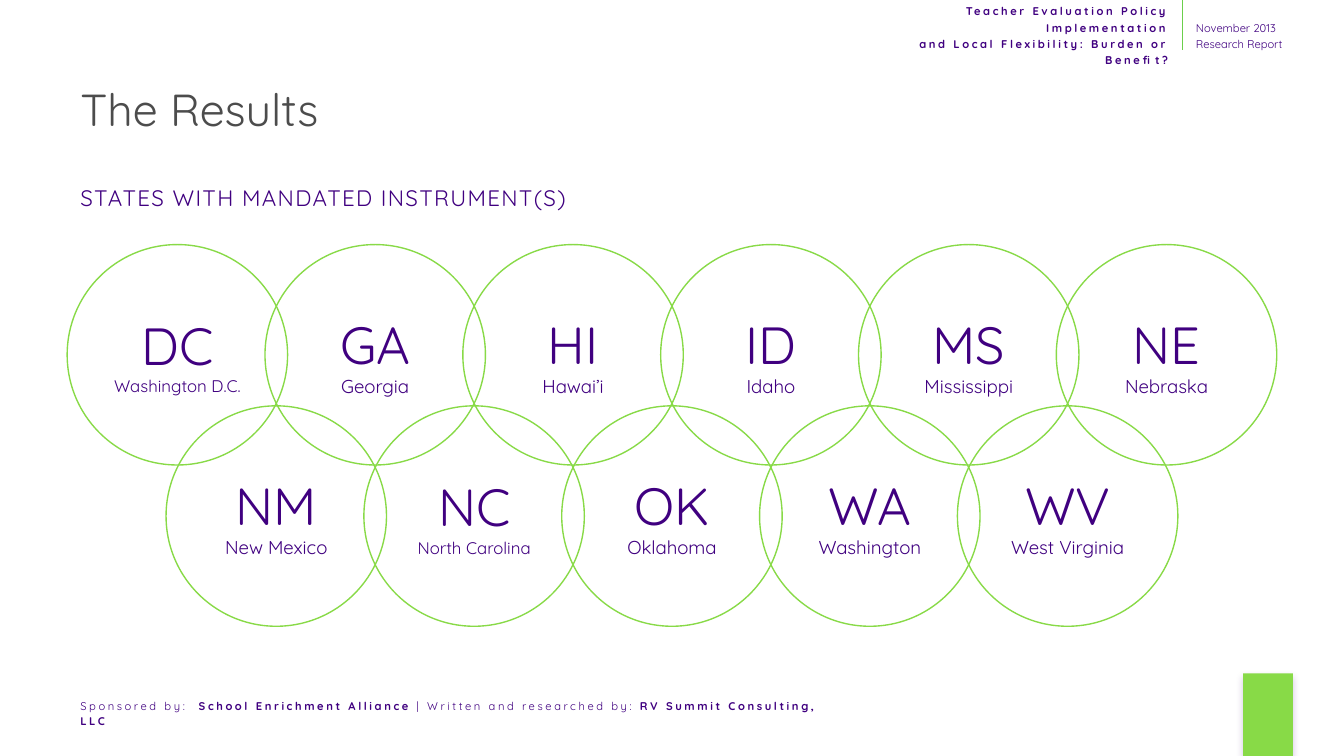
from lxml import etree
from pptx import Presentation
from pptx.dml.color import RGBColor as RGB
from pptx.enum.shapes import MSO_CONNECTOR as LINE, MSO_SHAPE as SHAPE
from pptx.enum.text import MSO_ANCHOR as ANCHOR, PP_ALIGN as ALIGN
from pptx.oxml import parse_xml
from pptx.util import Inches, Pt

FONT = "Quicksand"
COLORS = {"violet": "400080", "green": "88DA47", "rule": "6BCF4B", "grey": "4C4C4C"}

# Content: each line is a list of (text, bold) runs
TITLE = [[("The Results", False)]]
SUBHEAD = [[("STATES WITH MANDATED INSTRUMENT(S)", False)]]
REPORT = [[("Teacher Evaluation Policy Implementation\v"
            "and Local Flexibility: Burden or Benefit?", True)]]
DATE = [[("November 2013", False)], [("Research Report", False)]]
CREDIT = [[("Sponsored by:  ", False), ("School Enrichment Alliance", True),
           (" | Written and researched by: ", False),
           ("RV Summit Consulting, LLC", True)]]

# Rows of states: code, name, size of name
ROWS = [
    [("DC", "Washington D.C.", 9), ("GA", "Georgia", 10), ("HI", "Hawai’i", 10),
     ("ID", "Idaho", 10), ("MS", "Mississippi", 10), ("NE", "Nebraska", 10)],
    [("NM", "New Mexico", 10), ("NC", "North Carolina", 9), ("OK", "Oklahoma", 10),
     ("WA", "Washington", 10), ("WV", "West Virginia", 10)],
]

# Circle grid: the second row sits half a step to the right
LEFT, RIGHT, TOP, DROP, SIZE = 0.5, 9.5, 1.82, 1.2, 1.64
STEP = (RIGHT - LEFT - SIZE) / (len(ROWS[0]) - 1)

NS = "http://schemas.openxmlformats.org/drawingml/2006/main"
SHADOW = f"""<a:effectLst xmlns:a="{NS}">
  <a:outerShdw blurRad="53340" dist="25400" dir="5400000" rotWithShape="0">
    <a:srgbClr val="{COLORS['violet']}"><a:alpha val="24000"/></a:srgbClr>
  </a:outerShdw>
</a:effectLst>"""


def color(name):
    return RGB.from_string(COLORS[name])


def style(font, size, tint="violet"):
    font.name, font.size = FONT, Pt(size)
    font.color.rgb = color(tint)


def add_text(slide, box, lines, size, tint="violet", anchor=ANCHOR.MIDDLE,
             align=ALIGN.LEFT, lead=1.0, track=0):
    frame = slide.shapes.add_textbox(*map(Inches, box)).text_frame
    frame.word_wrap = True
    frame.vertical_anchor = anchor
    for i, line in enumerate(lines):
        para = frame.paragraphs[0] if i == 0 else frame.add_paragraph()
        para.alignment, para.line_spacing = align, lead
        style(para.font, size, tint)
        for text, bold in line:
            # A vertical tab marks a line break inside a run
            for k, part in enumerate(text.split("\v")):
                if k:
                    para.add_line_break()
                run = para.add_run()
                run.text = part
                run.font.bold = bold
                if track:
                    run.font._element.set("spc", str(round(track * 100)))


def add_state(slide, left, top, code, name, size):
    ring = slide.shapes.add_shape(SHAPE.OVAL, *map(Inches, (left, top, SIZE, SIZE)))
    ring.shadow.inherit = False
    ring.fill.background()
    ring.line.color.rgb = color("green")
    ring.line.width = Pt(0.75)
    frame = ring.text_frame
    frame.word_wrap = True
    frame.vertical_anchor = ANCHOR.MIDDLE
    frame.text = f"{code}\n{name}"
    for para, points in zip(frame.paragraphs, (28, size)):
        para.alignment = ALIGN.CENTER
        style(para.font, points)


def main():
    # Wide slide, 16:9
    deck = Presentation()
    deck.slide_width = Inches(10)
    deck.slide_height = Inches(10 * 9 / 16)
    slide = deck.slides.add_slide(deck.slide_layouts[6])

    # Green corner block
    block = slide.shapes.add_shape(SHAPE.RECTANGLE, *map(Inches, (9.25, 5.01, 0.37, 0.62)))
    block.fill.solid()
    block.fill.fore_color.rgb = color("green")
    block.line.fill.background()
    block._element.spPr.append(parse_xml(SHADOW))

    # Header and footer
    add_text(slide, (6.56, 0.07, 2.23, 0.37), REPORT, 6, align=ALIGN.RIGHT,
             lead=1.2, track=1.4)
    add_text(slide, (0.5, 5.22, 5.77, 0.17), CREDIT, 6, lead=1.1, track=1.4)
    add_text(slide, (8.8, 0.09, 0.9, 0.34), DATE, 6, lead=1.2)
    rule = slide.shapes.add_connector(LINE.STRAIGHT, *map(Inches, (8.8, 0.37, 8.8, 0)))
    rule.line.color.rgb = color("rule")
    rule.line.width = Pt(0.25)
    etree.SubElement(rule._element.spPr, f"{{{NS}}}effectLst")

    # Title
    add_text(slide, (0.5, 0.56, 9, 0.94), TITLE, 24, "grey", ANCHOR.TOP)

    # State circles
    for r, row in enumerate(ROWS):
        for c, state in enumerate(row):
            add_state(slide, LEFT + (c + r / 2) * STEP, TOP + r * DROP, *state)

    # Subhead
    add_text(slide, (0.5, 1.3, 9, 0.6), SUBHEAD, 12, anchor=ANCHOR.TOP,
             lead=1.1, track=0.7)

    deck.save("out.pptx")


if __name__ == "__main__":
    main()
